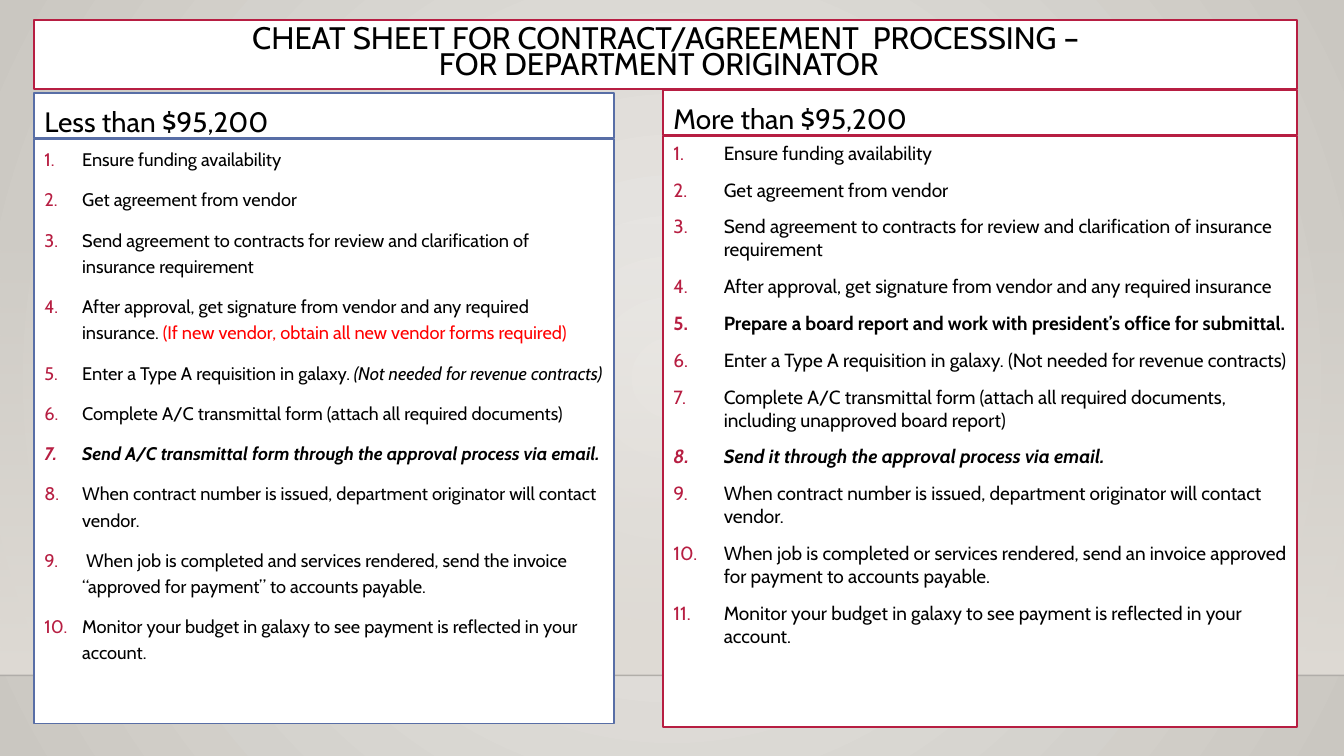
from dataclasses import dataclass

import pptx
import pptx.dml.color
import pptx.enum.shapes
import pptx.enum.text
import pptx.oxml
import pptx.oxml.ns
import pptx.util
from lxml import etree

Pt = pptx.util.Pt
RGB = pptx.dml.color.RGBColor.from_string
qn = pptx.oxml.ns.qn
ANCHOR = pptx.enum.text.MSO_ANCHOR
ALIGN = pptx.enum.text.PP_ALIGN


@dataclass(frozen=True)
class Theme:
    font: str = "Cabin"
    ink: str = "000000"
    paper: str = "FFFFFF"
    red: str = "B71E42"
    blue: str = "586EA6"
    alert: str = "FF0000"
    horizon: str = "000001"
    glow: str = "ECEAE7"
    edge: str = "CAC7C1"
    haze: str = "DFDBD5"
    title_size: float = 22.2
    heading_size: float = 20
    left_size: float = 13
    right_size: float = 13.6
    border: float = 1.25


THEME = Theme()
WIDTH, HEIGHT = 960, 540
HORIZON_TOP = 482.4

BOLD = {"bold": True}
BOLD_ITALIC = {"bold": True, "italic": True}

# Each step is a list of (text, format) spans.
SMALL_STEPS = [
    [("Ensure funding availability", {})],
    [("Get agreement from vendor", {})],
    [("Send agreement to contracts for review and clarification of insurance requirement", {})],
    [("After approval, get signature from vendor and any required insurance. ", {}),
     ("(If new vendor, obtain all new vendor forms required)", {"color": THEME.alert})],
    [("Enter a Type A requisition in galaxy. ", {}),
     ("(Not needed for revenue contracts)", {"italic": True})],
    [("Complete A/C transmittal form (attach all required documents)", {})],
    [("Send A/C transmittal form through the approval process via email.", BOLD_ITALIC)],
    [("When contract number is issued, department originator will contact vendor.", {})],
    [(" When job is completed and services rendered, send the invoice  "
      "“approved for payment” to accounts payable.", {})],
    [("Monitor your budget in galaxy to see payment is reflected in your account.", {})],
]
LARGE_STEPS = [
    [("Ensure funding availability", {})],
    [("Get agreement from vendor", {})],
    [("Send agreement to contracts for review and clarification of insurance requirement", {})],
    [("After approval, get signature from vendor and any required insurance", {})],
    [("Prepare a board report and work with president’s office for submittal.", BOLD)],
    [("Enter a Type A requisition in galaxy. (Not needed for revenue contracts)", {})],
    [("Complete A/C transmittal form (attach all required documents, "
      "including unapproved board report)", {})],
    [("Send it through the approval process via email.", BOLD_ITALIC)],
    [("When contract number is issued, department originator will contact vendor.", {})],
    [("When job is completed or services rendered, send an invoice approved "
      "for payment to accounts payable.", {})],
    [("Monitor your budget in galaxy to see payment is reflected in your account.", {})],
]
TITLE_LINES = [
    [("CHEAT SHEET FOR CONTRACT/AGREEMENT  PROCESSING –", {})],
    [("FOR DEPARTMENT ORIGINATOR  ", {})],
]


def add_span(para, text, size, bold=False, italic=False, color=THEME.ink):
    span = para.add_run()
    span.text = text
    font = span.font
    font.name, font.size = THEME.font, Pt(size)
    font.bold, font.italic = bold, italic
    font.color.rgb = RGB(color)


def number_paragraph(para, indent):
    properties = para._p.get_or_add_pPr()
    properties.set("marL", str(Pt(indent)))
    properties.set("indent", str(-Pt(indent)))
    color = etree.SubElement(properties, qn("a:buClr"))
    etree.SubElement(color, qn("a:srgbClr"), val=THEME.red)
    etree.SubElement(properties, qn("a:buFont"), typeface=THEME.font)
    etree.SubElement(properties, qn("a:buAutoNum"), type="arabicPeriod")


def write_text(box, lines, size, spacing=1.0, gap=0, indent=0,
               align=ALIGN.LEFT, anchor=ANCHOR.TOP):
    """Fill a box with paragraphs, numbered when an indent is given."""
    frame = box.text_frame
    frame.word_wrap = True
    frame.auto_size = pptx.enum.text.MSO_AUTO_SIZE.NONE
    frame.vertical_anchor = anchor
    for index, spans in enumerate(lines):
        para = frame.add_paragraph() if index else frame.paragraphs[0]
        if indent:
            number_paragraph(para, indent)
        para.alignment = align
        para.line_spacing = spacing
        para.space_before = Pt(gap if index else 0)
        para.space_after = Pt(0)
        for text, style in spans:
            add_span(para, text, size, **style)


def place_box(box, left, top, width, height, border):
    box.left, box.top, box.width, box.height = map(Pt, (left, top, width, height))
    box.fill.solid()
    box.fill.fore_color.rgb = RGB(THEME.paper)
    box.line.color.rgb = RGB(border)
    box.line.width = Pt(THEME.border)


def set_opacity(color_element, percent):
    etree.SubElement(color_element, qn("a:alpha"), val=str(percent * 1000))


def set_gradient(fill, start, end):
    fill.gradient()
    for stop, color in zip(fill.gradient_stops, (start, end)):
        stop.color.rgb = RGB(color)


def paint_background(page):
    fill = page.background.fill
    set_gradient(fill, THEME.glow, THEME.edge)
    linear = next(page.element.iter(qn("a:lin")))
    circle = etree.Element(qn("a:path"), path="circle")
    etree.SubElement(circle, qn("a:fillToRect"), l="50000", t="50000", r="50000", b="50000")
    linear.getparent().replace(linear, circle)


def add_haze(page):
    top = 159.1
    haze = page.shapes.add_shape(pptx.enum.shapes.MSO_SHAPE.RECTANGLE,
                                 Pt(0), Pt(top), Pt(WIDTH), Pt(HORIZON_TOP - top))
    haze.shadow.inherit = False
    haze.line.fill.background()
    set_gradient(haze.fill, THEME.haze, THEME.haze)
    haze.fill.gradient_angle = 270
    set_opacity(next(haze.element.iter(qn("a:srgbClr"))), 0)
    page.shapes.title.element.addprevious(haze.element)


def add_horizon(page):
    horizon = page.shapes.add_connector(pptx.enum.shapes.MSO_CONNECTOR.STRAIGHT,
                                        Pt(0), Pt(HORIZON_TOP), Pt(WIDTH), Pt(HORIZON_TOP))
    horizon.line.color.rgb = RGB(THEME.horizon)
    horizon.line.width = Pt(1)
    set_opacity(next(horizon.element.iter(qn("a:srgbClr"))), 20)
    etree.SubElement(horizon.element.spPr, qn("a:effectLst"))
    page.shapes.title.element.addprevious(horizon.element)


def fill_column(heading, body, title, steps, left, top, width, height, border, **style):
    """Set a heading box and the numbered steps below it."""
    heading_height, body_offset = 32.4, 33.1
    place_box(heading, left, top, width, heading_height, border)
    write_text(heading, [[(title, {})]], THEME.heading_size, spacing=1.2)
    place_box(body, left, top + body_offset, width, height, border)
    write_text(body, steps, gap=10, **style)


def main():
    deck = pptx.Presentation()
    deck.slide_width, deck.slide_height = Pt(WIDTH), Pt(HEIGHT)
    page = deck.slides.add_slide(deck.slide_layouts.get_by_name("Comparison"))
    paint_background(page)
    add_haze(page)
    add_horizon(page)

    title, left_heading, left_body, right_heading, right_body = page.placeholders
    place_box(title, 24.5, 14.4, 902.2, 49, THEME.red)
    write_text(title, TITLE_LINES, THEME.title_size, spacing=0.7,
               align=ALIGN.CENTER, anchor=ANCHOR.MIDDLE)
    fill_column(left_heading, left_body, "Less than $95,200", SMALL_STEPS,
                24.5, 66.2, 414, 417.6, THEME.blue,
                size=THEME.left_size, spacing=1.2, indent=27)
    fill_column(right_heading, right_body, "More than $95,200", LARGE_STEPS,
                473.8, 64.1, 452.9, 421.9, THEME.red,
                size=THEME.right_size, indent=36)
    deck.save("out.pptx")


if __name__ == "__main__":
    main()
